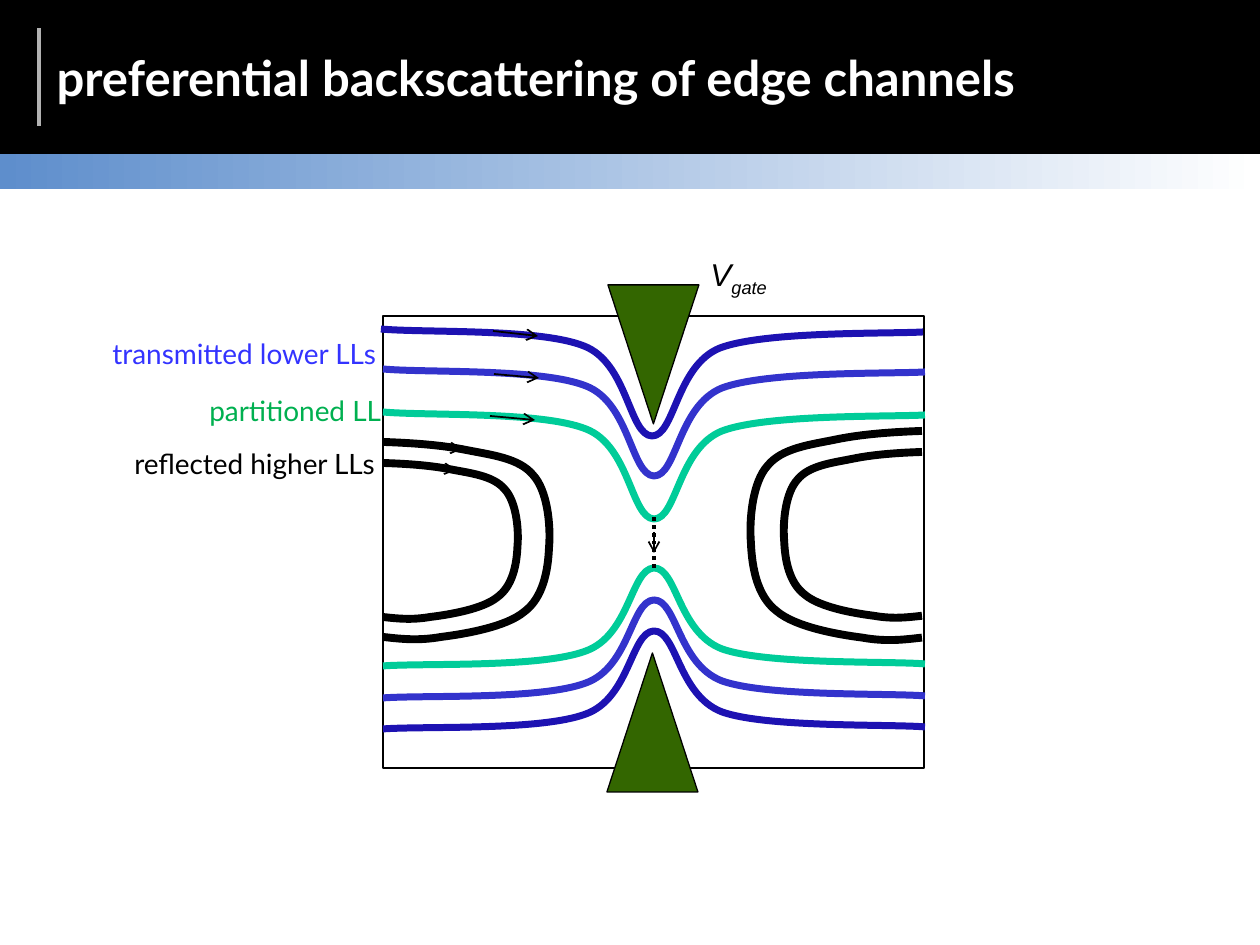
from itertools import chain
from lxml import etree
from pptx import Presentation
from pptx import util as u
from pptx.dml.color import RGBColor
from pptx.enum import dml, shapes, text
from pptx.oxml.ns import qn

PX = 914400 // 126
COLOURS = {
    "black": "000000", "white": "FFFFFF", "sky": "5E8ECC", "grey": "B2B2B2",
    "gate": "336600", "navy": "1D12B2", "blue": "3333CC", "teal": "00CC99",
    "transmitted": "3333FF", "partitioned": "00B050",
}
TITLE = "preferential backscattering of edge channels"
LABELS = [
    ("reflected higher LLs", "black", (122, 440, 275, 47)),
    ("transmitted lower LLs", "transmitted", (100, 330, 297, 47)),
    ("partitioned LL", "partitioned", (197, 387, 199, 47)),
]
GATES = [((607, 653, 91, 139), False), ((608, 285, 91, 139), True)]

CHANNEL_X = [925, 891, 767, 722, 678, 677, 654, 631, 630, 586, 541, 425, 383]
UPPER_Y = [4, 6, 3, 20, 38, 108, 108, 107, 35, 18, 0, 5, 1]
LOWER_Y = [96, 93, 97, 81, 64, 0, 0, 1, 67, 83, 100, 95, 98]
CHANNELS = [
    ("navy", UPPER_Y, -2, 328), ("blue", UPPER_Y, 0, 368), ("teal", UPPER_Y, 0, 411),
    ("teal", LOWER_Y, 0, 568), ("blue", LOWER_Y, 0, 600), ("navy", LOWER_Y, 0, 631),
]

LOOP = [
    (0, 0), (29, 1), (58, 3), (83, 8), (108, 13), (136, 16), (150, 33),
    (164, 48), (168, 82), (166, 106), (165, 129), (160, 156), (141, 170),
    (123, 185), (82, 192), (58, 195), (35, 199), (18, 197), (0, 195),
]
REFLECTED = [
    ((383, 442), (1, 1)), ((383, 463), (0.81, 0.79)),
    ((922, 431), (-1.03, 1.06)), ((922, 452), (-0.83, 0.84)),
]
ARROWS = [
    (493, 331, 538, 336), (494, 374, 539, 378), (490, 416, 535, 420),
    (654, 532, 654, 553), (418, 445, 462, 449), (412, 465, 456, 470),
]

deck = Presentation()
deck.slide_width, deck.slide_height = 1260 * PX, 945 * PX
page = deck.slides.add_slide(deck.slide_layouts[5])


def colour(name):
    return RGBColor.from_string(COLOURS[name])


def emu(lengths):
    return [round(length * PX) for length in lengths]


def style_line(shape, name, width):
    shape.line.color.rgb = colour(name)
    shape.line.width = u.Pt(width)


def add_block(kind, place, fill=None, line="black"):
    block = page.shapes.add_shape(kind, *emu(place))
    block.shadow.inherit = False
    if fill:
        block.fill.solid()
        block.fill.fore_color.rgb = colour(fill)
    else:
        block.fill.background()
    if line:
        style_line(block, line, 0.75)
    else:
        block.line.fill.background()
    return block


def add_curve(points, name, width):
    start, *rest = [tuple(emu(point)) for point in points]
    builder = page.shapes.build_freeform(*start)
    builder.add_line_segments(rest, close=False)
    curve = builder.convert_to_shape()
    curve.shadow.inherit = False
    curve.fill.background()
    style_line(curve, name, width)
    outline = next(curve._element.iter(qn("a:path")))
    segments = outline.findall(qn("a:lnTo"))
    for first in range(0, len(segments), 3):
        bezier = etree.SubElement(outline, qn("a:cubicBezTo"))
        for segment in segments[first:first + 3]:
            bezier.append(segment[0])
            outline.remove(segment)


def add_line(ends, name, width, arrow=False):
    line = page.shapes.add_connector(shapes.MSO_CONNECTOR.STRAIGHT, *emu(ends))
    style_line(line, name, width)
    if arrow:
        etree.SubElement(line.line._get_or_add_ln(), qn("a:tailEnd"), type="arrow")
    etree.SubElement(line._element.spPr, qn("a:effectLst"))
    return line


def add_run(para, words, font, size, name):
    span = para.add_run()
    span.text = words
    span.font.name, span.font.size = font, u.Pt(size)
    span.font.color.rgb = colour(name)
    return span


def add_text_box(place, wrap):
    box = page.shapes.add_textbox(*emu(place))
    box.text_frame.word_wrap = wrap
    box.text_frame.auto_size = text.MSO_AUTO_SIZE.SHAPE_TO_FIT_TEXT
    return box.text_frame.paragraphs[0]


RECTANGLE = shapes.MSO_SHAPE.RECTANGLE
header = add_block(RECTANGLE, (0, 0, 1260, 154), "black")
ribbon = add_block(RECTANGLE, (0, 154, 1260, 35), line=None)
ribbon.fill.gradient()
ribbon.fill.gradient_angle = 0
for stop, name, position in zip(ribbon.fill.gradient_stops, ("sky", "white"), (0, 1)):
    stop.color.rgb = colour(name)
    stop.position = position
rule = add_line((39, 126, 39, 28), "grey", 2.25)

title = page.shapes.title
title.left, title.top, title.width, title.height = emu((44, 29, 1158, 96))
title.text_frame.vertical_anchor = text.MSO_ANCHOR.MIDDLE
title.text_frame.auto_size = text.MSO_AUTO_SIZE.NONE
para = title.text_frame.paragraphs[0]
para.alignment = text.PP_ALIGN.LEFT
add_run(para, TITLE, "Lato", 28, "white").font.bold = True
for backdrop in (header, ribbon, rule):
    title._element.addprevious(backdrop._element)

add_block(RECTANGLE, (383, 316, 541, 452))
for place, flipped in GATES:
    gate = add_block(shapes.MSO_SHAPE.ISOSCELES_TRIANGLE, place, "gate")
    if flipped:
        gate._element.spPr.xfrm.set("flipV", "1")

for name, heights, shift, top in CHANNELS:
    add_curve([(x + shift, top + y) for x, y in zip(CHANNEL_X, heights)], name, 4)
tunnel = add_line((654, 568, 654, 515), "black", 2.25)
tunnel.line.dash_style = dml.MSO_LINE.ROUND_DOT
for (left, top), (across, down) in REFLECTED:
    add_curve([(left + x * across, top + y * down) for x, y in LOOP], "black", 4.5)

for words, name, place in LABELS:
    add_run(add_text_box(place, False), words, "Lato", 16, name)
for ends in ARROWS:
    add_line(ends, "black", 1, arrow=True)

para = add_text_box((698, 249, 115, 52), True)
add_run(para, "V", "Arial", 18, "black").font.italic = True
subscript = add_run(para, "gate", "Arial", 18, "black")
subscript.font.italic = True
subscript._r.get_or_add_rPr().set("baseline", "-25000")

deck.save("out.pptx")
